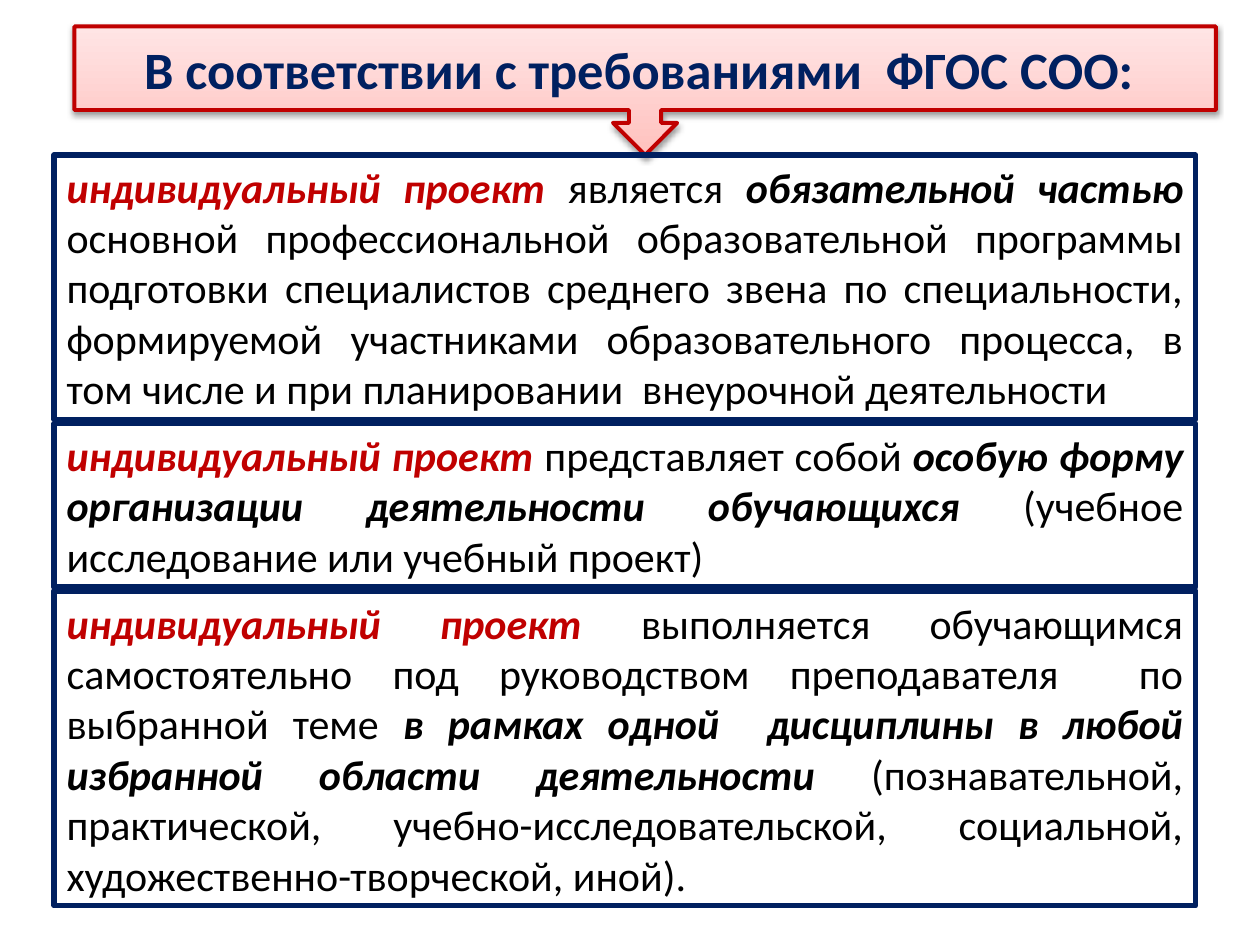
from lxml import etree
from pptx import Presentation
from pptx.dml.color import RGBColor
from pptx.enum.shapes import MSO_SHAPE
from pptx.enum.text import MSO_ANCHOR, MSO_AUTO_SIZE, PP_ALIGN
from pptx.oxml import parse_xml
from pptx.oxml.ns import nsdecls
from pptx.util import Inches, Pt

CALLOUT = MSO_SHAPE.DOWN_ARROW_CALLOUT
MIDDLE, TOP = MSO_ANCHOR.MIDDLE, MSO_ANCHOR.TOP
CENTER, JUSTIFY = PP_ALIGN.CENTER, PP_ALIGN.JUSTIFY
GROW = MSO_AUTO_SIZE.SHAPE_TO_FIT_TEXT
NAVY, RED, BLACK = "002060", "C00000", "000000"
WIDTH = Inches(9.06)


def rgb(value):
    return RGBColor.from_string(value)


def add_run(paragraph, text, color, font_format):
    run = paragraph.add_run()
    run.text = text
    run.font.name = "Calibri"
    run.font.color.rgb = rgb(color)
    for key, value in font_format.items():
        setattr(run.font, key, value)


HEADING = {"size": Pt(30), "bold": True}
PLAIN = {"size": Pt(24), "bold": False, "italic": False}
STRONG = {"size": Pt(24), "bold": True, "italic": True}

prs = Presentation()
prs.slide_width, prs.slide_height = Inches(10), Inches(7.5)
slide = prs.slides.add_slide(prs.slide_layouts[6])

# Heading callout with a gradient and a soft shadow
heading = slide.shapes.add_shape(CALLOUT, Inches(0.59), Inches(0.21), WIDTH, Inches(1.02))
for index, value in enumerate((0.25, 0.25, 0.25, 0.65)):
    heading.adjustments[index] = value
heading.fill.gradient()
heading.fill.gradient_angle = 90
for stop, position, color in zip(heading.fill.gradient_stops, (0, 1), ("FFC1BE", "FFE5E5")):
    stop.position = position
    stop.color.rgb = rgb(color)
heading.line.color.rgb = rgb(RED)
heading.line.width = Pt(2.25)

heading.shadow.inherit = False
effects = heading.fill._xPr.find("{*}effectLst")
shadow = parse_xml(
    f'<a:outerShdw {nsdecls("a")} blurRad="{Pt(3.1)}" dist="{Pt(1.6)}" dir="5400000" rotWithShape="0">'
    '<a:srgbClr val="000000"><a:alpha val="38000"/></a:srgbClr></a:outerShdw>'
)
effects.append(shadow)

heading.text_frame.word_wrap = True
heading.text_frame.vertical_anchor = MIDDLE
heading_line = heading.text_frame.paragraphs[0]
heading_line.alignment = CENTER
add_run(heading_line, "В соответствии с требованиями  ФГОС СОО: ", NAVY, HEADING)

# Requirements: top, height, then plain, emphasised and plain text
requirements = [
    (1.23, 2.1, "является ", "обязательной частью ",
     "основной профессиональной образовательной программы подготовки специалистов "
     "среднего звена по специальности, формируемой участниками образовательного "
     "процесса, в том числе и при планировании  внеурочной деятельности "),
    (3.36, 1.3, "представляет собой ",
     "особую форму организации деятельности обучающихся",
     " (учебное исследование или учебный проект)"),
    (4.69, 2.5,
     "выполняется обучающимся самостоятельно под руководством преподавателя  "
     "по выбранной теме ",
     "в рамках одной  дисциплины в любой избранной области деятельности",
     " (познавательной, практической, учебно-исследовательской, социальной, "
     "художественно-творческой, иной)."),
]

for top, height, opening, emphasis, ending in requirements:
    requirement = slide.shapes.add_textbox(Inches(0.43), Inches(top), WIDTH, Inches(height))
    requirement.line.color.rgb = rgb(NAVY)
    requirement.line.width = Pt(3)
    frame_format = {"word_wrap": True, "auto_size": GROW, "vertical_anchor": TOP}
    for key, value in frame_format.items():
        setattr(requirement.text_frame, key, value)
    paragraph = requirement.text_frame.paragraphs[0]
    paragraph.alignment = JUSTIFY
    add_run(paragraph, "индивидуальный проект ", RED, STRONG)
    add_run(paragraph, opening, BLACK, PLAIN)
    add_run(paragraph, emphasis, BLACK, STRONG)
    add_run(paragraph, ending, BLACK, PLAIN)

prs.save("out.pptx")
